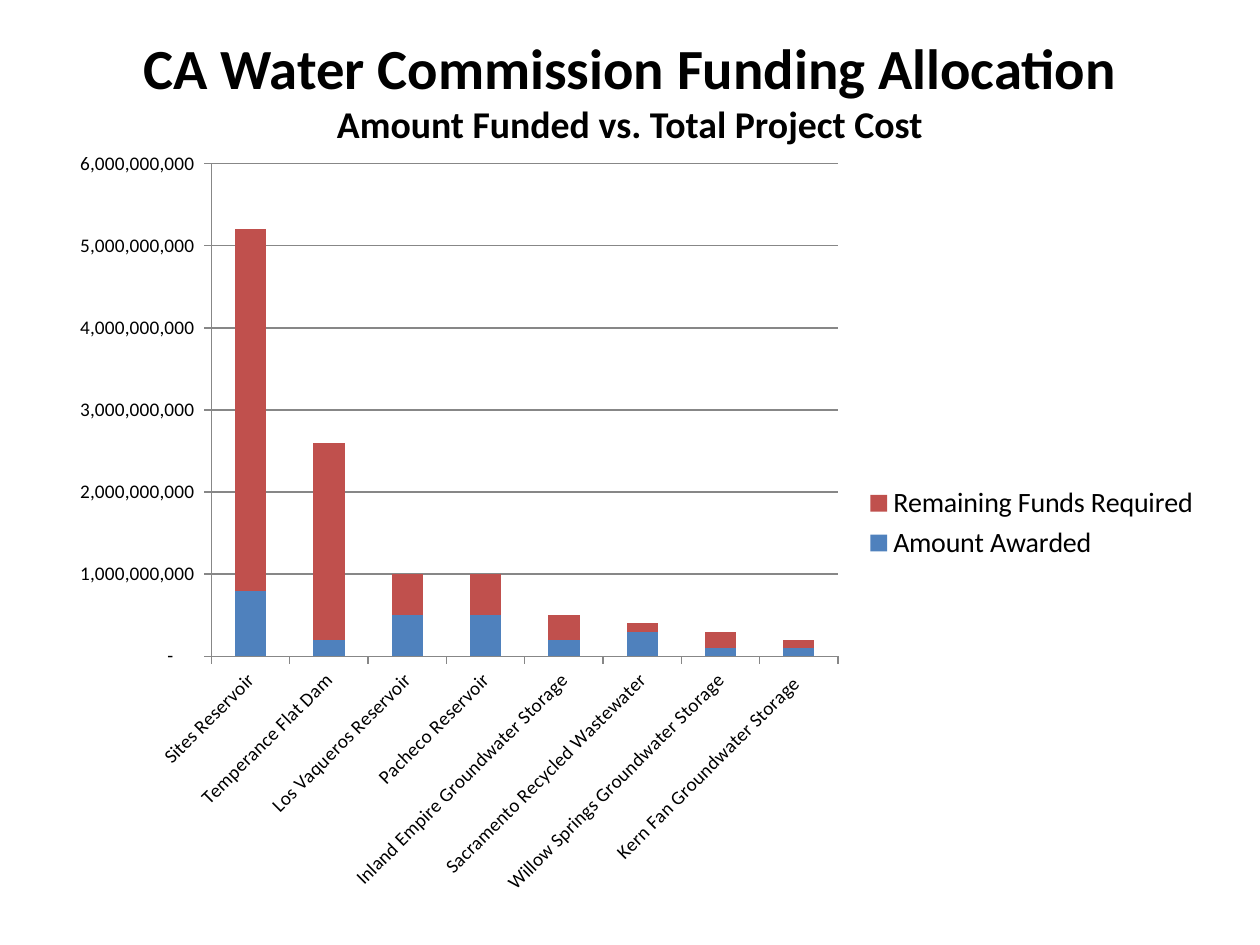
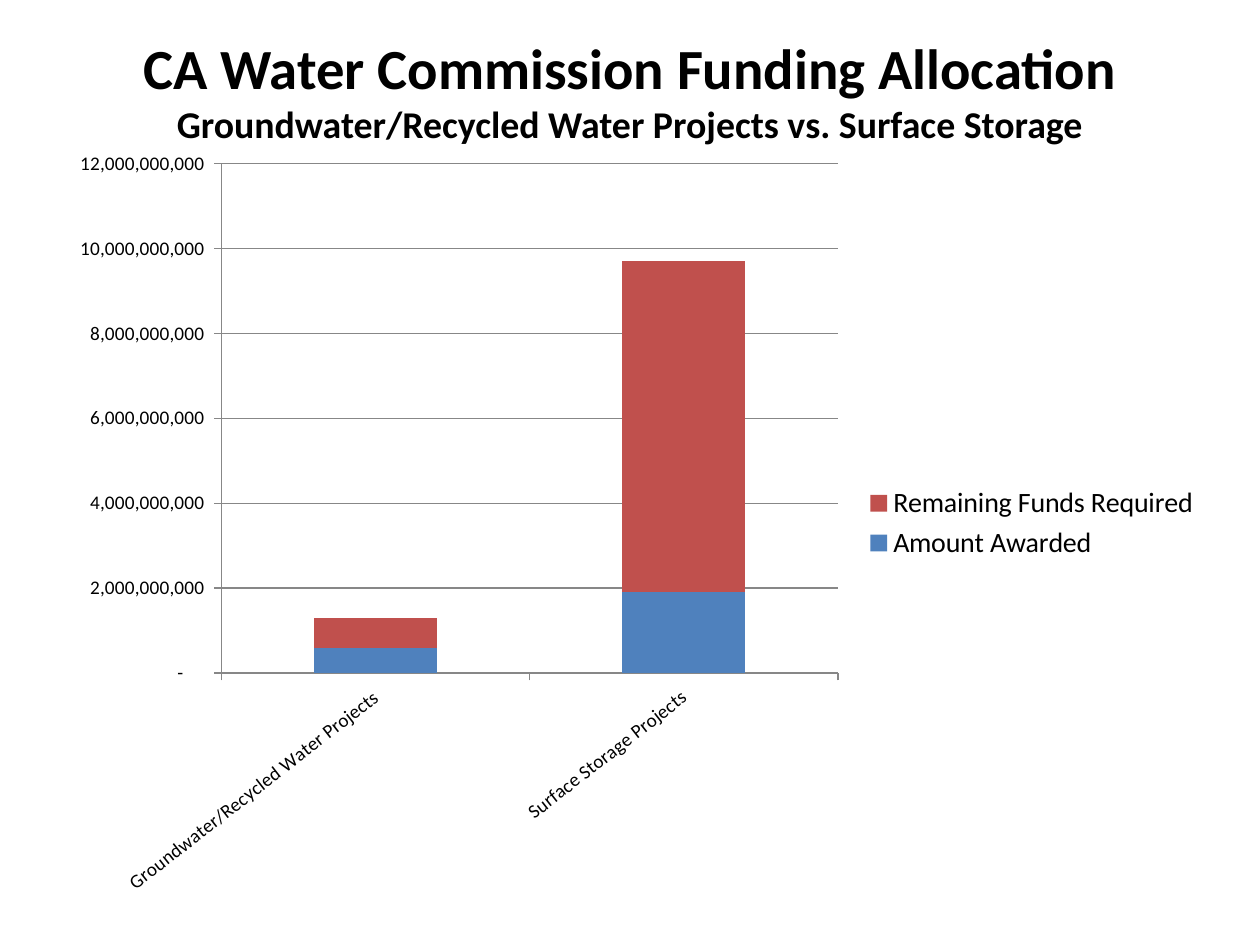
from dataclasses import dataclass
from pptx import Presentation
from pptx.chart.data import CategoryChartData
from pptx.dml.color import RGBColor
from pptx.enum.chart import XL_CHART_TYPE, XL_LEGEND_POSITION, XL_TICK_MARK
from pptx.enum.text import MSO_ANCHOR, PP_ALIGN
from pptx.oxml.ns import qn
from pptx.util import Pt


@dataclass(frozen=True)
class Theme:
    font: str = "Calibri"
    ink: RGBColor = RGBColor(0x00, 0x00, 0x00)
    rule: RGBColor = RGBColor(0x87, 0x87, 0x87)
    fills: tuple = (RGBColor(0x4F, 0x81, 0xBD), RGBColor(0xC0, 0x50, 0x4D))
    title: float = 32.4
    sub: float = 21.6
    body: int = 18
    key: int = 16
    label: int = 11


theme = Theme()
heading = "CA Water Commission Funding Allocation"
names = ("Amount Awarded", "Remaining Funds Required")
money = '_(* #,##0_);_(* \\(#,##0\\);_(* "-"??_);_('
unit = 100_000_000

# Each project: awarded and remaining funds, in hundreds of millions
projects = {
    "Sites Reservoir": (8, 44),
    "Temperance Flat Dam": (2, 24),
    "Los Vaqueros Reservoir": (5, 5),
    "Pacheco Reservoir": (5, 5),
    "Inland Empire Groundwater Storage": (2, 3),
    "Sacramento Recycled Wastewater": (3, 1),
    "Willow Springs Groundwater Storage": (1, 2),
    "Kern Fan Groundwater Storage ": (1, 1),
}
groups = {
    "Groundwater/Recycled Water Projects": (6, 7),
    "Surface Storage Projects": (19, 78),
}
# Subtitle, funds, axis top, axis step and label tilt in degrees
pages = [
    ("Amount Funded vs. Total Project Cost", projects, 60, 10, 45),
    ("Groundwater/Recycled Water Projects vs. Surface Storage", groups, 120, 20, 38),
]


def style(font, size, bold=False):
    font.name = theme.font
    font.size = Pt(size)
    font.bold = bold
    font.color.rgb = theme.ink


def trace(line):
    line.color.rgb = theme.rule
    line.width = Pt(0.75)


deck = Presentation()
deck.slide_width, deck.slide_height = Pt(720), Pt(540)

for sub, funds, top, step, tilt in pages:
    slide = deck.slides.add_slide(deck.slide_layouts[6])

    # Chart
    data = CategoryChartData(number_format=money)
    data.categories = list(funds)
    for name, sums in zip(names, zip(*funds.values())):
        data.add_series(name, [n * unit for n in sums])
    chart = slide.shapes.add_chart(
        XL_CHART_TYPE.COLUMN_STACKED, Pt(30), Pt(78), Pt(663), Pt(442), data
    ).chart
    chart.has_title = False
    style(chart.font, theme.body)

    plot = chart.plots[0]
    plot.gap_width, plot.overlap = 150, 100
    plot.vary_by_categories = False
    for series, fill in zip(plot.series, theme.fills):
        series.format.fill.solid()
        series.format.fill.fore_color.rgb = fill

    for axis in (chart.category_axis, chart.value_axis):
        axis.major_tick_mark = XL_TICK_MARK.OUTSIDE
        axis.minor_tick_mark = XL_TICK_MARK.NONE
        style(axis.tick_labels.font, theme.label)
        trace(axis.format.line)
    body = chart.category_axis._element.find(qn("c:txPr")).find(qn("a:bodyPr"))
    body.set("rot", str(-tilt * 60000))
    body.set("vert", "horz")

    scale = chart.value_axis
    scale.minimum_scale, scale.maximum_scale = 0, top * unit
    scale.major_unit = step * unit
    scale.tick_labels.number_format = money
    scale.tick_labels.number_format_is_linked = False
    scale.has_major_gridlines = True
    trace(scale.major_gridlines.format.line)

    chart.has_legend = True
    chart.legend.position = XL_LEGEND_POSITION.RIGHT
    chart.legend.include_in_layout = False
    style(chart.legend.font, theme.key)

    # Title
    frame = slide.shapes.add_textbox(Pt(54), Pt(12), Pt(612), Pt(78)).text_frame
    frame.word_wrap = True
    frame.vertical_anchor = MSO_ANCHOR.MIDDLE
    para = frame.paragraphs[0]
    para.alignment = PP_ALIGN.CENTER
    run = para.add_run()
    run.text = heading
    style(run.font, theme.title, True)
    para.add_line_break()
    run = para.add_run()
    run.text = sub
    style(run.font, theme.sub, True)

deck.save("out.pptx")
